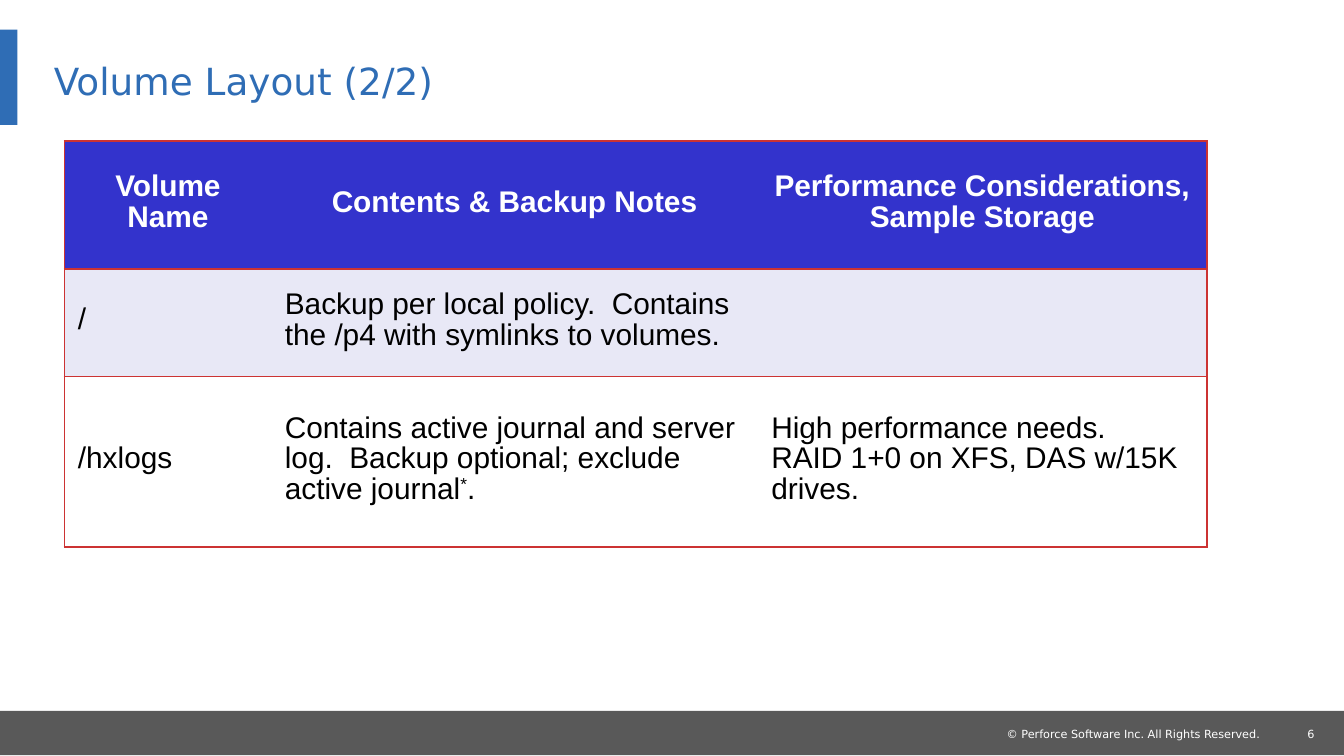
from typing import NamedTuple

from lxml.etree import SubElement
from pptx import Presentation
from pptx.dml.color import RGBColor
from pptx.enum.shapes import MSO_SHAPE as Shape
from pptx.enum.text import MSO_ANCHOR as Anchor, PP_ALIGN as Align
from pptx.oxml import parse_xml
from pptx.oxml.ns import nsdecls, qn
from pptx.util import Inches, Pt

BLUE, GREY, WHITE, RED = "2F6DB5", "595959", "FFFFFF", "CC3333"
SANS = "DejaVu Sans"


class Box(NamedTuple):
    left: float
    top: float
    width: float
    height: float


class Row(NamedTuple):
    height: float
    fill: str
    color: str
    bold: bool
    align: Align
    cells: tuple


class Note(NamedTuple):
    box: Box
    text: str
    align: Align
    wrap: bool


# A "^" in a cell marks the next character as superscript
ROWS = [
    Row(0.95, "3333CC", WHITE, True, Align.CENTER, (
        "Volume Name", "Contents & Backup Notes",
        "Performance Considerations, Sample Storage")),
    Row(0.8, "E8E8F6", "000000", False, Align.LEFT, (
        "/", "Backup per local policy.  Contains the /p4 with symlinks to volumes.", "")),
    Row(1.27, WHITE, "000000", False, Align.LEFT, (
        "/hxlogs",
        "Contains active journal and server log.  Backup optional; "
        "exclude active journal^*.",
        "High performance needs.  RAID 1+0 on XFS, DAS w/15K drives.")),
]
WIDTHS = [1.54, 3.62, 3.34]
BARS = [(Box(0, 5.29, 10, 0.33), GREY), (Box(0, 0.22, 0.13, 0.71), BLUE)]
NOTES = [
    Note(Box(9.35, 5.41, 0.43, 0.1), "6", Align.RIGHT, True),
    Note(Box(7.49, 5.41, 1.94, 0.1),
         "© Perforce Software Inc. All Rights Reserved.", Align.LEFT, False),
]


def rgb(color: str) -> RGBColor:
    return RGBColor.from_string(color)


def place(box: Box) -> list:
    return [Inches(n) for n in box]


def style(para, face: str, size: float, color: str, bold: bool = False) -> None:
    font = para.font
    font.name, font.size, font.bold = face, Pt(size), bold
    font.color.rgb = rgb(color)


def clear(frame) -> None:
    frame.margin_left = frame.margin_right = 0
    frame.margin_top = frame.margin_bottom = 0


def add_bar(slide, box: Box, color: str) -> None:
    bar = slide.shapes.add_shape(Shape.RECTANGLE, *place(box))
    bar.shadow.inherit = False
    bar.fill.solid()
    bar.fill.fore_color.rgb = rgb(color)
    bar.line.fill.background()


def add_note(slide, note: Note) -> None:
    frame = slide.shapes.add_textbox(*place(note.box)).text_frame
    clear(frame)
    frame.word_wrap = note.wrap
    para = frame.paragraphs[0]
    para.text, para.alignment = note.text, note.align
    style(para, SANS, 6, WHITE)


def set_title(slide, text: str) -> None:
    title = slide.shapes.title
    title.left, title.top, title.width, title.height = place(Box(0.4, 0.28, 7.74, 0.6))
    frame = title.text_frame
    clear(frame)
    frame.vertical_anchor = Anchor.MIDDLE
    para = frame.paragraphs[0]
    para.text, para.alignment, para.line_spacing = text, Align.LEFT, Pt(27)
    style(para, SANS, 20, BLUE)


def set_edges(cell, first: bool, last: bool) -> None:
    """Rule every row, and only the outer sides of the columns."""
    props = cell._tc.get_or_add_tcPr()
    edges = {"lnL": first, "lnR": last, "lnT": True, "lnB": True}
    for i, (tag, drawn) in enumerate(edges.items()):
        edge = parse_xml(f'<a:{tag} {nsdecls("a")} w="{Pt(1)}"/>')
        if drawn:
            fill = SubElement(edge, qn("a:solidFill"))
            SubElement(fill, qn("a:srgbClr"), val=RED)
        else:
            SubElement(edge, qn("a:noFill"))
        props.insert(i, edge)


def fill_cell(cell, text: str, row: Row) -> None:
    cell.fill.solid()
    cell.fill.fore_color.rgb = rgb(row.fill)
    cell.vertical_anchor = Anchor.MIDDLE
    cell.margin_left = cell.margin_right = Inches(0.1)
    cell.margin_top, cell.margin_bottom = Inches(0.02), Inches(0.05)
    para = cell.text_frame.paragraphs[0]
    para.alignment, para.line_spacing = row.align, 0.93
    body, _, rest = text.partition("^")
    for part, base in ((body, 0), (rest[:1], 30000), (rest[1:], 0)):
        if part:
            run = para.add_run()
            run.text = part
            if base:
                run._r.get_or_add_rPr().set("baseline", str(base))
    style(para, "Arial", 16, row.color, row.bold)


def add_grid(slide) -> None:
    box = Box(0.48, 1.05, sum(WIDTHS), sum(r.height for r in ROWS))
    grid = slide.shapes.add_table(len(ROWS), len(WIDTHS), *place(box)).table
    for col, width in zip(grid.columns, WIDTHS):
        col.width = Inches(width)
    for line, row in zip(grid.rows, ROWS):
        line.height = Inches(row.height)
        for i, (cell, text) in enumerate(zip(line.cells, row.cells)):
            fill_cell(cell, text, row)
            set_edges(cell, i == 0, i == len(WIDTHS) - 1)


def main() -> None:
    deck = Presentation()
    # Widescreen, 16 to 9
    deck.slide_width, deck.slide_height = Inches(10), Inches(10 * 9 / 16)
    slide = deck.slides.add_slide(deck.slide_layouts[5])

    # Footer band and title accent
    for box, color in BARS:
        add_bar(slide, box, color)
    for note in NOTES:
        add_note(slide, note)

    # Title and table
    set_title(slide, "Volume Layout (2/2)")
    add_grid(slide)
    deck.save("out.pptx")


if __name__ == "__main__":
    main()
